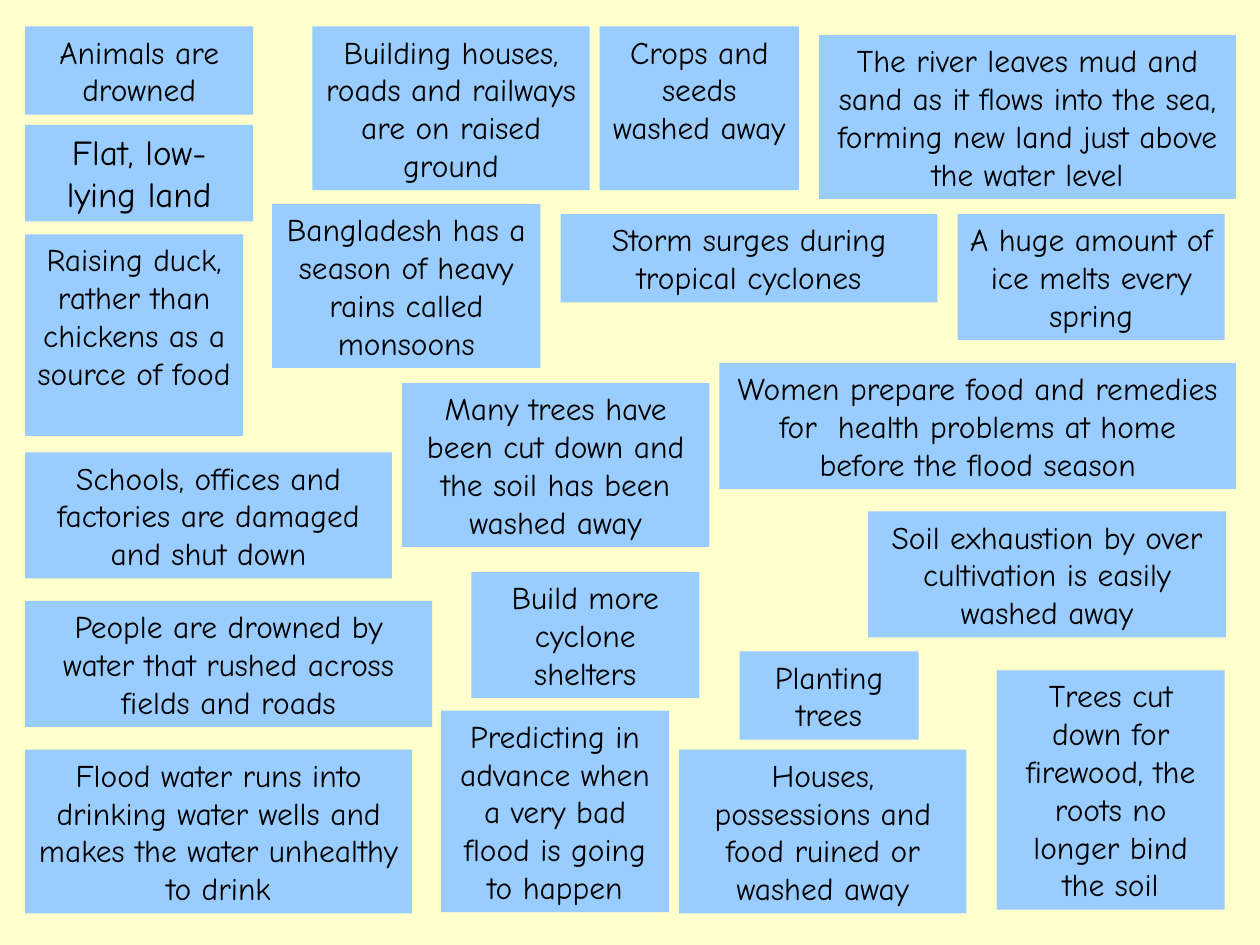
"""Build a slide of flood cause, effect and response cards for Bangladesh."""
from pptx import Presentation
from pptx.dml.color import RGBColor
from pptx.enum.shapes import MSO_SHAPE as Shape
from pptx.enum.text import MSO_ANCHOR as Anchor, MSO_AUTO_SIZE as AutoSize, PP_ALIGN as Align
from pptx.util import Inches, Pt

THEME = {
    "background": RGBColor.from_string("FFFFCC"),
    "card": RGBColor.from_string("99CCFF"),
    "text": RGBColor.from_string("000000"),
    "font": "Comic Neue",
    "size": 18,
    "large": 20,
    "space_ratio": 0.625,
}
LEFT_EDGE = 0.2
TOP_ROW = 0.21
BOTTOM_ROW = 5.95
LINE_HEIGHT = 0.3
PADDING = 0.1

CARDS = [
    ("Animals are drowned", LEFT_EDGE, TOP_ROW, 1.81, 2),
    ("Building houses, roads and railways are on raised ground", 2.48, TOP_ROW, 2.2, 4),
    ("Houses, possessions and food ruined or washed away", 5.39, BOTTOM_ROW, 2.28, 4),
    ("Women prepare food and remedies for  health problems at home before the flood season",
     5.71, 2.88, 4.1, 3),
    ("Planting trees", 5.87, 5.17, 1.42, 2),
    ("Soil exhaustion by over cultivation is easily washed away", 6.89, 4.06, 2.84, 3),
    ("Trees cut down for firewood, the roots no longer bind the soil", 7.91, 5.32, 1.81, 6),
    ("Schools, offices and factories are damaged and shut down", LEFT_EDGE, 3.59, 2.91, 3),
    ("Crops and seeds washed away", 4.76, TOP_ROW, 1.58, 4),
    ("People are drowned by water that rushed across fields and roads",
     LEFT_EDGE, 4.77, 3.23, 3),
    ("Flood water runs into drinking water wells and makes the water unhealthy to drink",
     LEFT_EDGE, BOTTOM_ROW, 3.07, 4),
    ("The river leaves mud and sand as it flows into the sea, "
     "forming new land just above the water level", 6.5, 0.28, 3.31, 4),
    ("Raising duck, rather than chickens as a source of food", LEFT_EDGE, 1.86, 1.73, 5),
    ("Predicting in advance when a very bad flood is going to happen", 3.5, 5.64, 1.81, 5),
    ("Build more cyclone shelters", 3.74, 4.54, 1.81, 3),
    ("Flat, low-lying land", LEFT_EDGE, 0.99, 1.81, 2, THEME["large"]),
    ("Many trees have been cut down and the soil has been washed away", 3.19, 3.04, 2.44, 4),
    ("A huge amount of ice melts every spring", 7.6, 1.7, 2.12, 3),
    ("Bangladesh has a season of heavy rains called monsoons", 2.16, 1.62, 2.13, 4),
    ("Storm surges during tropical cyclones", 4.45, 1.7, 2.99, 2),
]

FRAME_FORMAT = {
    "word_wrap": True,
    "auto_size": AutoSize.SHAPE_TO_FIT_TEXT,
    "vertical_anchor": Anchor.TOP,
    "margin_left": Inches(0.1),
    "margin_right": Inches(0.1),
    "margin_top": Inches(0.05),
    "margin_bottom": Inches(0.05),
}


def apply_format(target, values):
    """Set each named attribute on the target."""
    for name, value in values.items():
        setattr(target, name, value)


def add_card(slide, statement, left, top, width, lines, size=THEME["size"]):
    """Add one card whose height follows its line count and type size."""
    height = lines * LINE_HEIGHT * size / THEME["size"] + PADDING
    card = slide.shapes.add_shape(
        Shape.RECTANGLE, Inches(left), Inches(top), Inches(width), Inches(height))
    card.shadow.inherit = False
    card.fill.solid()
    card.fill.fore_color.rgb = THEME["card"]
    card.line.fill.background()
    apply_format(card.text_frame, FRAME_FORMAT)
    paragraph = card.text_frame.paragraphs[0]
    apply_format(paragraph, {
        "alignment": Align.CENTER, "space_before": Pt(size * THEME["space_ratio"])})
    wording = paragraph.add_run()
    wording.text = statement
    apply_format(wording.font, {"name": THEME["font"], "size": Pt(size)})
    wording.font.color.rgb = THEME["text"]


def main():
    """Create and save the presentation."""
    deck = Presentation()
    apply_format(deck, {"slide_width": Inches(10), "slide_height": Inches(7.5)})
    slide = deck.slides.add_slide(deck.slide_layouts[6])
    slide.background.fill.solid()
    slide.background.fill.fore_color.rgb = THEME["background"]
    for card in CARDS:
        add_card(slide, *card)
    deck.save("out.pptx")


if __name__ == "__main__":
    main()
